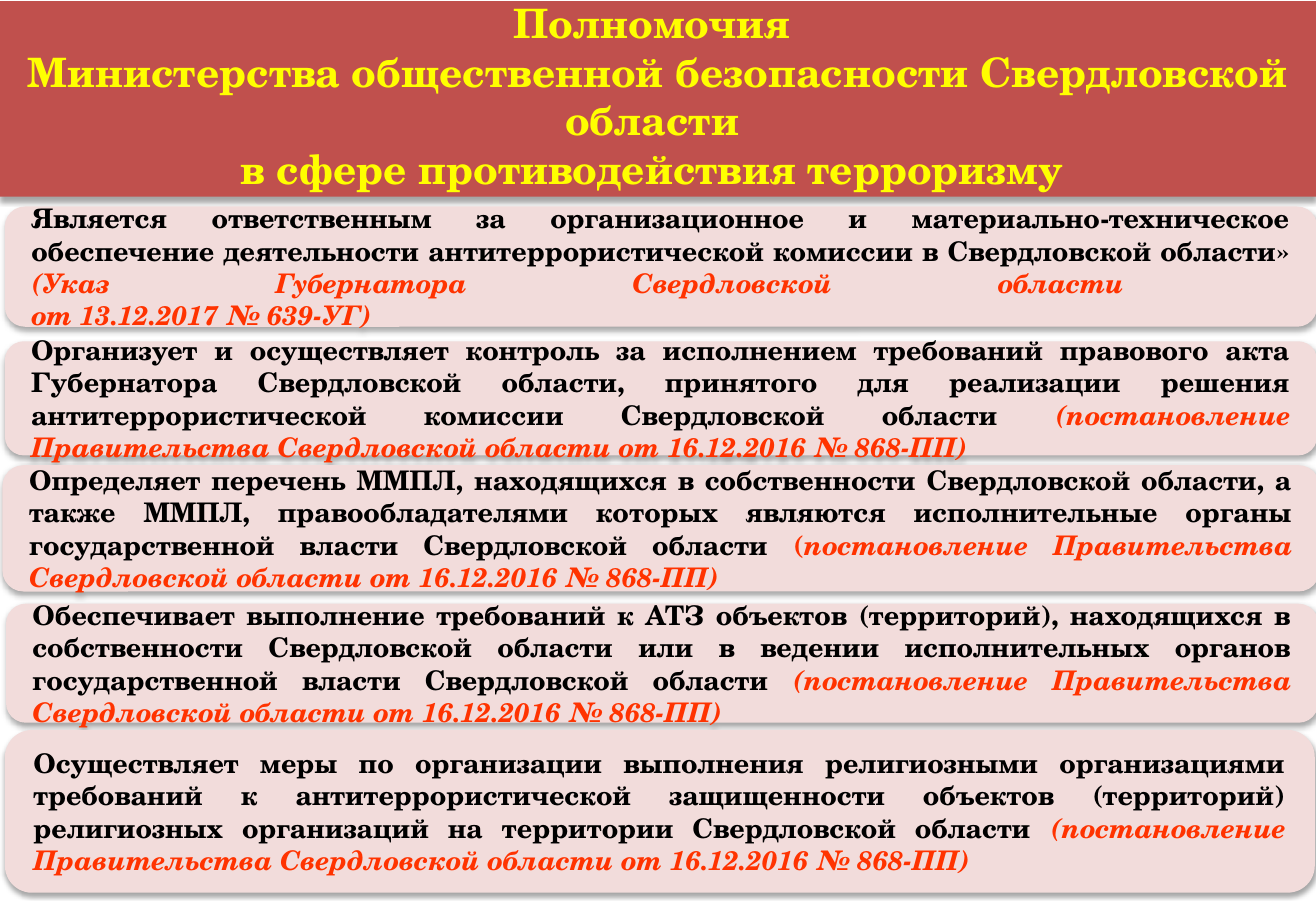
from copy import deepcopy

from lxml.etree import SubElement
from pptx import Presentation
from pptx.dml.color import RGBColor
from pptx.enum.shapes import MSO_SHAPE as Shape
from pptx.enum.text import MSO_ANCHOR as Anchor, PP_ALIGN as Align
from pptx.oxml.ns import qn
from pptx.util import Inches, Pt

COLUMNS, ROWS = 1083, 750
CELL = Inches(0.01)
FONT = "TeX Gyre Schola"
COLORS = {
    "header": "C0504D",
    "title": "FFFF00",
    "card": "F2DCDB",
    "duty": "000000",
    "source": "FF3300",
    "shadow": "000000",
}

TITLE = [
    "Полномочия ",
    "Министерства общественной безопасности Свердловской области \n"
    "в сфере противодействия терроризму ",
]
HEADER_BOX = (0, 1, COLUMNS, 161)

DECREE = "постановление Правительства Свердловской области от 16.12.2016 № 868-ПП)"
# Each card: box in grid cells, duty, upright and italic parts of the source
CARDS = [
    ((4, 170, 1080, 99),
     "Является ответственным за организационное и материально-техническое "
     "обеспечение деятельности антитеррористической комиссии в Свердловской области» ",
     "", "(Указ Губернатора Свердловской области \nот 13.12.2017 № 639-УГ)"),
    ((4, 281, 1080, 94),
     "Организует и осуществляет контроль за исполнением требований правового акта "
     "Губернатора Свердловской области, принятого для реализации решения "
     "антитеррористической комиссии Свердловской области ",
     "", "(" + DECREE),
    ((2, 383, 1084, 104),
     "Определяет перечень ММПЛ, находящихся в собственности Свердловской области, "
     "а также ММПЛ, правообладателями которых являются исполнительные органы "
     "государственной власти Свердловской области ",
     "(", DECREE),
    ((5, 497, 1080, 98),
     "Обеспечивает выполнение требований к АТЗ объектов (территорий), находящихся "
     "в собственности Свердловской области или в ведении исполнительных органов "
     "государственной власти Свердловской области ",
     "", "(" + DECREE),
    ((4, 601, 1078, 134),
     "Осуществляет меры по организации выполнения религиозными организациями "
     "требований к антитеррористической защищенности объектов (территорий) "
     "религиозных организаций на территории Свердловской области ",
     "", "(" + DECREE),
]


def add_shadow(shape, blur, distance):
    """Cast a soft shadow straight down; lengths are in points."""
    shape.shadow.inherit = False
    effects = shape._element.spPr.find(qn("a:effectLst"))
    shadow = SubElement(effects, qn("a:outerShdw"), blurRad=str(Pt(blur)),
                        dist=str(Pt(distance)), dir="5400000", rotWithShape="0")
    color = SubElement(shadow, qn("a:srgbClr"), val=COLORS["shadow"])
    SubElement(color, qn("a:alpha"), val="35000")


def add_panel(slide, preset, box, color, margins):
    """Add a filled shape; margins are left, top, right and bottom in grid cells."""
    shape = slide.shapes.add_shape(preset, *(cells * CELL for cells in box))
    shape.fill.solid()
    shape.fill.fore_color.rgb = RGBColor.from_string(COLORS[color])
    shape.line.fill.background()
    frame = shape.text_frame
    frame.word_wrap = True
    frame.vertical_anchor = Anchor.MIDDLE
    (frame.margin_left, frame.margin_top,
     frame.margin_right, frame.margin_bottom) = (cells * CELL for cells in margins)
    return shape


def add_text(paragraph, text, size, color, italic=False):
    """Append bold text, giving its line breaks the same format as its runs."""
    for index, line in enumerate(text.split("\n")):
        if index:
            paragraph.add_line_break()
            line_break = paragraph._p.findall(qn("a:br"))[-1]
            line_break.insert(0, deepcopy(run._r.rPr))
        run = paragraph.add_run()
        run.text = line
        run.font.name = FONT
        run.font.size = Pt(size)
        run.font.bold = True
        run.font.italic = italic
        run.font.color.rgb = RGBColor.from_string(COLORS[color])


def add_header(slide, box):
    header = add_panel(slide, Shape.RECTANGLE, box, "header", (11, 0, 11, 6))
    add_shadow(header, 3, 3)
    frame = header.text_frame
    for index, text in enumerate(TITLE):
        paragraph = frame.add_paragraph() if index else frame.paragraphs[0]
        paragraph.alignment = Align.CENTER
        add_text(paragraph, text, 24, "title")


def add_card(slide, box, duty, upright, italic):
    card = add_panel(slide, Shape.ROUNDED_RECTANGLE, box, "card", (17, 17, 17, 17))
    add_shadow(card, 3.1, 1.8)
    paragraph = card.text_frame.paragraphs[0]
    paragraph.alignment = Align.JUSTIFY
    add_text(paragraph, duty, 16, "duty")
    if upright:
        add_text(paragraph, upright, 16, "source")
    add_text(paragraph, italic, 16, "source", italic=True)


def main():
    presentation = Presentation()
    presentation.slide_width = COLUMNS * CELL
    presentation.slide_height = ROWS * CELL
    slide = presentation.slides.add_slide(presentation.slide_layouts[6])
    add_header(slide, HEADER_BOX)
    for card in CARDS:
        add_card(slide, *card)
    presentation.save("out.pptx")


if __name__ == "__main__":
    main()
